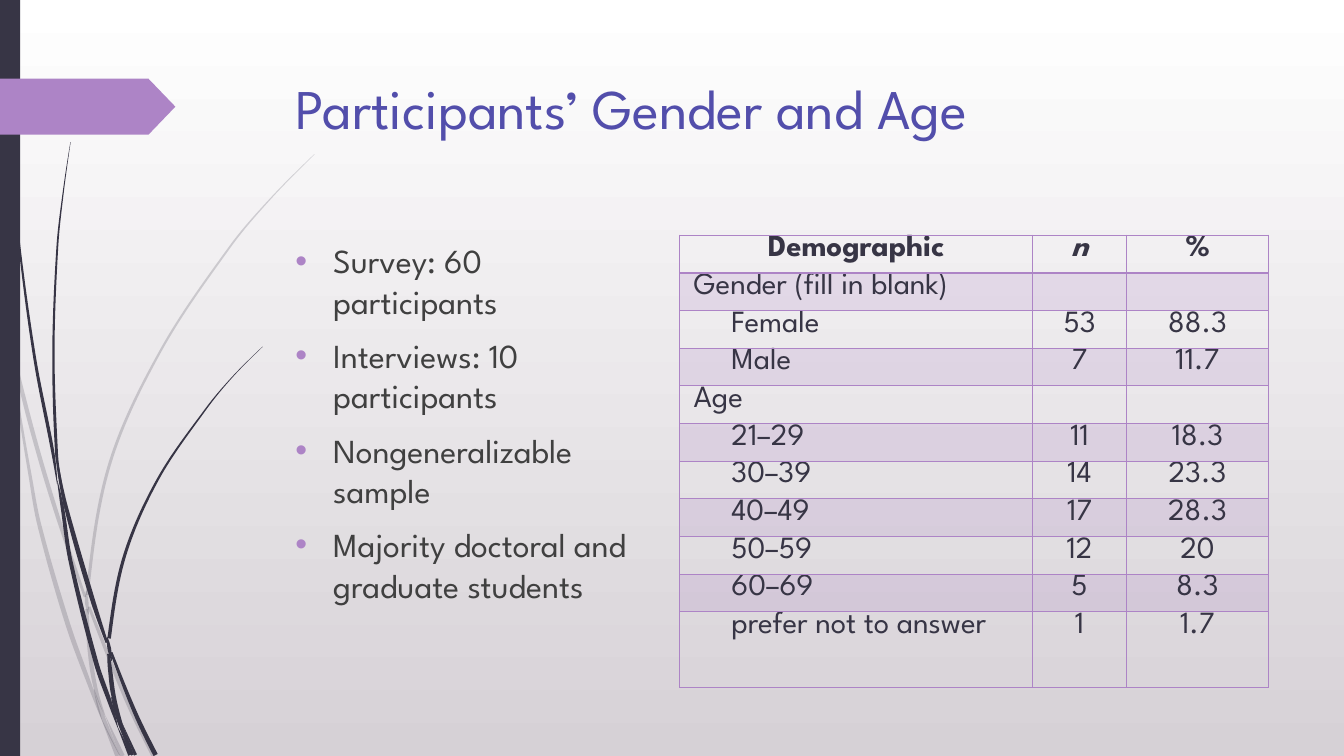
from math import hypot

from lxml import etree
from pptx import Presentation
from pptx.dml.color import RGBColor
from pptx.enum.shapes import MSO_SHAPE
from pptx.enum.text import MSO_ANCHOR, MSO_AUTO_SIZE, PP_ALIGN
from pptx.oxml.ns import qn
from pptx.util import Pt

RECT, TAG = MSO_SHAPE.RECTANGLE, MSO_SHAPE.PENTAGON
LEFT, CENTER = PP_ALIGN.LEFT, PP_ALIGN.CENTER
TOP, NO_FIT = MSO_ANCHOR.TOP, MSO_AUTO_SIZE.NONE

TITLE = "Participants’ Gender and Age"
BULLETS = [
    "Survey: 60 participants",
    "Interviews: 10 participants",
    "Nongeneralizable sample",
    "Majority doctoral and graduate students",
]
HEADER = ("Demographic", "n", "%")
GROUPS = [
    ("Gender (fill in blank)", [("Female", "53", "88.3"), ("Male", "7", "11.7")]),
    ("Age", [
        ("21–29", "11", "18.3"),
        ("30–39", "14", "23.3"),
        ("40–49", "17", "28.3"),
        ("50–59", "12", "20"),
        ("60–69", "5", "8.3"),
        ("prefer not to answer", "1", "1.7"),
    ]),
]

FONT = "League Spartan"
COLORS = {"dark": "373545", "purple": "AD84C6", "title": "524EAB",
          "body": "404040", "top": "FFFFFF", "bottom": "D6D1D6"}
COL_WIDTHS = (252, 67.3, 101.2)
ROW_HEIGHT, LAST_ROW_HEIGHT = 26.92, 54
INDENT = 27

# Grass blade sections: centre x, centre y and thickness along each one
PALE_BLADES = [
    [(1.3, 209, 2.5), (5.5, 236, 1.5), (8, 252, 0.2)],
    [(10, 248.4, 0.2), (13.7, 270.7, 2.6), (27.5, 323.6, 3), (43.2, 375, 2.8),
     (60.8, 426.5, 1.8)],
    [(63.6, 433.5, 2), (90, 499, 2.9), (109.8, 540, 3.2)],
    [(75.6, 512, 0.2), (87.5, 540, 3.2)],
    [(8, 252, 0.3), (14, 295, 1.5), (21.2, 338, 2.2), (28.1, 375, 2.8),
     (48.6, 446.4, 3.4), (66.2, 495, 2.6), (72.7, 514, 0.3)],
    [(62, 435, 2.2), (64.1, 465, 2.9), (68.4, 492, 2.7), (75.4, 512, 0.3)],
    [(224.6, 110.2, 0.3), (193, 142.2, 0.8), (164.5, 176, 1.3), (114.5, 251, 1.6),
     (78.1, 332.3, 2.1), (62.3, 425, 2.2)],
    [(72.7, 514, 0.3), (84, 540, 3.3)],
    [(61.6, 422, 0.5), (62, 431, 2.6), (63.3, 439, 0.3)],
    [(67, 492, 0.3), (73, 511, 2.9), (85.7, 540, 0.3)],
]
DARK_BLADES = [
    [(2.5, 0, 0.5), (5.4, 79, 0.7), (13, 167.4, 1.3), (24.8, 255.6, 2),
     (37.6, 322, 2.2), (41, 346, 0.3)],
    [(43.2, 340, 0.3), (47.5, 363.6, 2.7), (65.2, 425.5, 3.3), (76.3, 459, 1.8)],
    [(79.5, 466, 1.8), (96.5, 509, 2.9), (111.2, 539.3, 3.3)],
    [(41, 343.5, 0.3), (44.8, 364, 2.4), (50.4, 400.7, 2.8), (68.8, 473.8, 3.3),
     (79, 503, 2.8), (84.2, 519.8, 0.3)],
    [(50.4, 101.5, 0.2), (45, 139, 0.8), (41, 176.4, 1.3), (38.2, 251.3, 1.6),
     (40.5, 324.7, 2), (43.2, 340, 0.3)],
    [(87.8, 517.7, 0.2), (96.8, 539.3, 2.2)],
    [(39.6, 323.3, 0.3), (42.8, 342, 2), (46, 363.6, 0.3)],
    [(187.6, 247.7, 0.2), (166.3, 269, 0.5), (147.2, 292, 1), (113, 342, 1.6),
     (89, 397, 2.2), (78, 456, 2.5)],
    [(84.2, 519.8, 0.3), (92.9, 539.3, 2.8)],
    [(77.5, 467, 1.8), (78.6, 478, 2.9), (81.4, 498.2, 3), (87.6, 517.7, 0.3)],
    [(76.5, 455, 0.5), (78, 463, 2.6), (79.7, 472, 0.3)],
    [(79.5, 498, 0.3), (84.8, 514, 3), (94.7, 539.3, 2)],
]


def rgb(name):
    return RGBColor.from_string(COLORS[name])


def fill_solid(fill, color, alpha=None):
    fill.solid()
    fill.fore_color.rgb = rgb(color)
    if alpha:
        clr = fill._xPr.find(qn("a:solidFill") + "/" + qn("a:srgbClr"))
        etree.SubElement(clr, qn("a:alpha"), val=str(alpha * 1000))


def finish(sp, color, alpha=None):
    """Plain fill, no outline, no shadow."""
    fill_solid(sp.fill, color, alpha)
    sp.line.fill.background()
    sp.shadow.inherit = False


def unit_directions(pts):
    """Unit vector along the line at each point."""
    result = []
    for before, after in zip([pts[0], *pts], [*pts[1:], pts[-1]]):
        dx, dy = after[0] - before[0], after[1] - before[1]
        result.append((dx / hypot(dx, dy), dy / hypot(dx, dy)))
    return result


def bezier_segments(pts):
    """Two control points and an end point for each step of a smooth line."""
    dirs = unit_directions(pts)
    for i, (a, b) in enumerate(zip(pts, pts[1:])):
        reach = hypot(b[0] - a[0], b[1] - a[1]) / 3
        c1 = [p + d * reach for p, d in zip(a, dirs[i])]
        c2 = [p - d * reach for p, d in zip(b, dirs[i + 1])]
        if i == 0:
            c1 = [(p + c) / 2 for p, c in zip(a, c2)]
        if i == len(pts) - 2:
            c2 = [(p + c) / 2 for p, c in zip(b, c1)]
        yield c1, c2, b


def add_blade(shapes, knots, alpha=None):
    left, right = [], []
    for (x, y, w), (ux, uy) in zip(knots, unit_directions(knots)):
        left.append((Pt(x + uy * w / 2), Pt(y - ux * w / 2)))
        right.insert(0, (Pt(x - uy * w / 2), Pt(y + ux * w / 2)))
    builder = shapes.build_freeform(*left[0])
    builder.add_line_segments(left[1:] + right)
    sp = builder.convert_to_shape()
    lines = list(sp._element.iter(qn("a:lnTo")))
    n = len(knots)
    for side, steps in ((left, lines[:n - 1]), (right, lines[n:2 * n - 1])):
        local = [(x - sp.left, y - sp.top) for x, y in side]
        for step, segment in zip(steps, bezier_segments(local)):
            curve = etree.Element(qn("a:cubicBezTo"))
            for x, y in segment:
                etree.SubElement(curve, qn("a:pt"), x=str(round(x)), y=str(round(y)))
            step.getparent().replace(step, curve)
    finish(sp, "dark", alpha)


def style_run(r, size, color):
    r.font.name, r.font.size, r.font.color.rgb = FONT, Pt(size), rgb(color)


def place(sp, left, top, width, height):
    sp.left, sp.top, sp.width, sp.height = Pt(left), Pt(top), Pt(width), Pt(height)
    tf = sp.text_frame
    tf.word_wrap, tf.auto_size, tf.vertical_anchor = True, NO_FIT, TOP
    return tf


def set_borders(cell, bottom):
    tcPr = cell._tc.get_or_add_tcPr()
    for tag, width in (("lnL", 1), ("lnR", 1), ("lnT", 1), ("lnB", bottom)):
        ln = etree.SubElement(tcPr, qn("a:" + tag), w=str(Pt(width)))
        solid = etree.SubElement(ln, qn("a:solidFill"))
        etree.SubElement(solid, qn("a:srgbClr"), val=COLORS["purple"])


def add_demographics(shapes):
    rows = [(HEADER, 0)]
    for group, members in GROUPS:
        rows.append(((group, "", ""), 0))
        rows += [(member, INDENT) for member in members]
    height = ROW_HEIGHT * (len(rows) - 1) + LAST_ROW_HEIGHT
    table = shapes.add_table(len(rows), len(COL_WIDTHS), Pt(485.5), Pt(168),
                             Pt(sum(COL_WIDTHS)), Pt(height)).table
    table.first_row = table.horz_banding = False
    for col, width in zip(table.columns, COL_WIDTHS):
        col.width = Pt(width)
    for i, (values, indent) in enumerate(rows):
        table.rows[i].height = Pt(ROW_HEIGHT if i < len(rows) - 1 else LAST_ROW_HEIGHT)
        for j, value in enumerate(values):
            cell = table.cell(i, j)
            cell.margin_left = cell.margin_right = Pt(10)
            cell.margin_top = cell.margin_bottom = 0
            set_borders(cell, 2 if i == 0 else 1)
            if i % 2:
                fill_solid(cell.fill, "purple", 20)
            else:
                cell.fill.background()
            p = cell.text_frame.paragraphs[0]
            p.text = value
            p.alignment = CENTER if i == 0 or j else LEFT
            if indent and j == 0:
                p._p.get_or_add_pPr().set("marL", str(Pt(indent)))
            for r in p.runs:
                style_run(r, 22, "dark")
                r.font.bold, r.font.italic = i == 0, value == "n"


def main():
    prs = Presentation()
    prs.slide_width, prs.slide_height = Pt(960), Pt(540)
    s = prs.slides.add_slide(prs.slide_layouts[1])
    bg = s.background.fill
    bg.gradient()
    bg.gradient_angle = 270
    for stop, name in zip(bg.gradient_stops, ("top", "bottom")):
        stop.color.rgb = rgb(name)

    for blades, alpha in ((PALE_BLADES, 20), (DARK_BLADES, None)):
        for knots in blades:
            add_blade(s.shapes, knots, alpha)
    finish(s.shapes.add_shape(RECT, 0, 0, Pt(14.4), Pt(540)), "dark")
    tag = s.shapes.add_shape(TAG, 0, Pt(56.2), Pt(125.3), Pt(40))
    tag.adjustments[0] = 0.48
    finish(tag, "purple")

    tf = place(s.shapes.title, 204, 49, 702, 101)
    tf.text = TITLE
    tf.paragraphs[0].alignment = LEFT
    style_run(tf.paragraphs[0].runs[0], 40, "title")

    tf = place(s.placeholders[1], 203.8, 168, 271, 297)
    tf.text = "\n".join(BULLETS)
    for p in tf.paragraphs:
        p.space_before = Pt(10)
        pPr = p._p.get_or_add_pPr()
        pPr.set("marL", str(Pt(INDENT)))
        pPr.set("indent", str(-Pt(INDENT)))
        clr = etree.SubElement(pPr, qn("a:buClr"))
        etree.SubElement(clr, qn("a:srgbClr"), val=COLORS["purple"])
        etree.SubElement(pPr, qn("a:buChar"), char="•")
        style_run(p.runs[0], 24, "body")

    add_demographics(s.shapes)
    prs.save("out.pptx")


if __name__ == "__main__":
    main()
